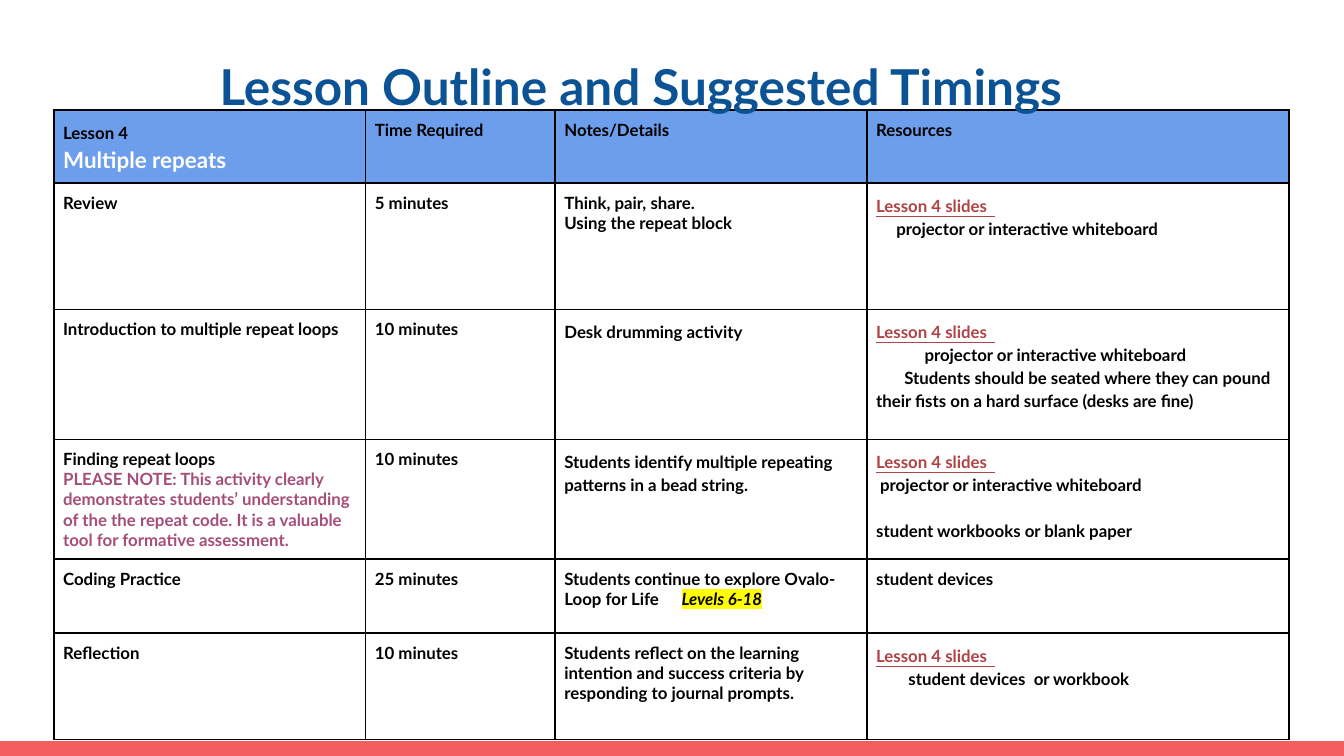
from dataclasses import dataclass

from lxml.etree import SubElement
from pptx import Presentation
from pptx.dml.color import RGBColor
from pptx.enum.shapes import MSO_SHAPE
from pptx.enum.text import PP_ALIGN
from pptx.oxml.ns import qn
from pptx.util import Inches, Pt


@dataclass(frozen=True)
class Theme:
    font: str = "Lato"
    title: str = "0B5394"
    text: str = "000000"
    header: str = "6D9EEB"
    subtitle: str = "FFFFFF"
    link: str = "AF4345"
    note: str = "A64D79"
    bar: str = "F55E61"
    marker: str = "FFFF00"
    title_size: float = 26.5
    subtitle_size: float = 12
    body_size: float = 9
    airy: float = 1.15


THEME = Theme()


@dataclass(frozen=True)
class Line:
    """One paragraph; indent is in inches, before and gap are in points."""
    text: str
    color: str = THEME.text
    size: float = THEME.body_size
    spacing: float = 1.0
    indent: float = 0
    before: float = 0
    underline: bool = False
    gap: float = 0
    marked: str = ""


def airy(text, **options):
    return Line(text, spacing=THEME.airy, **options)


LINK = airy("Lesson 4 slides  ", color=THEME.link, underline=True)
SCREEN = "projector or interactive whiteboard"
COLUMNS = [2.32, 1.41, 2.32, 3.14]
ROWS = [0.53, 0.94, 0.97, 0.63, 0.55, 0.79]
LESSONS = [
    [[airy("Lesson 4"),
      airy("Multiple repeats", color=THEME.subtitle, size=THEME.subtitle_size)],
     [Line("Time Required")],
     [Line("Notes/Details")],
     [Line("Resources")]],
    [[Line("Review")],
     [Line("5 minutes")],
     [Line("Think, pair, share."), Line("Using the repeat block")],
     [LINK, airy(SCREEN, indent=0.15)]],
    [[Line("Introduction to multiple repeat loops")],
     [Line("10 minutes")],
     [airy("Desk drumming activity")],
     [LINK, airy(SCREEN, indent=0.36),
      airy("Students should be seated where they can pound their fists "
           "on a hard surface (desks are fine)", indent=0.21)]],
    [[Line("Finding repeat loops"),
      Line("PLEASE NOTE: This activity clearly demonstrates students’ understanding "
           "of the the repeat code. It is a valuable tool for formative assessment.",
           color=THEME.note)],
     [Line("10 minutes")],
     [airy("Students identify multiple repeating patterns in a bead string.")],
     [LINK, airy(SCREEN, indent=0.03),
      airy("student workbooks or blank paper", before=12)]],
    [[Line("Coding Practice")],
     [Line("25 minutes")],
     [Line("Students continue to explore Ovalo- Loop for Life",
           gap=10, marked="Levels 6-18")],
     [Line("student devices")]],
    [[Line("Reflection")],
     [Line("10 minutes")],
     [Line("Students reflect on the learning intention and success criteria "
           "by responding to journal prompts.")],
     [LINK, airy("student devices  or workbook", indent=0.24)]],
]


def paint(fill, color):
    fill.solid()
    fill.fore_color.rgb = RGBColor.from_string(color)


def add_span(para, text):
    span = para.add_run()
    span.text = text
    return span


def add_marked_span(para, text, gap):
    """Adds highlighted italic text after one space widened by the gap."""
    space = add_span(para, " ")
    space._r.get_or_add_rPr().set("spc", str(round(gap * 100)))
    span = add_span(para, text)
    span.font.italic = True
    marker = SubElement(span._r.get_or_add_rPr(), qn("a:highlight"))
    SubElement(marker, qn("a:srgbClr"), val=THEME.marker)


def write_line(para, line):
    font = para.font
    font.name, font.size, font.bold = THEME.font, Pt(line.size), True
    font.underline = line.underline
    font.color.rgb = RGBColor.from_string(line.color)
    para.line_spacing = line.spacing
    para.space_before = Pt(line.before)
    properties = para._p.get_or_add_pPr()
    properties.set("marL", "0")
    properties.set("indent", str(Inches(line.indent)))
    add_span(para, line.text)
    if line.marked:
        add_marked_span(para, line.marked, line.gap)


def write_lines(frame, lines):
    for index, line in enumerate(lines):
        para = frame.add_paragraph() if index else frame.paragraphs[0]
        write_line(para, line)


def outline_cell(cell):
    properties = cell._tc.get_or_add_tcPr()
    for index, side in enumerate(("lnL", "lnR", "lnT", "lnB")):
        border = properties.makeelement(qn(f"a:{side}"), w=str(Pt(1)))
        fill = SubElement(border, qn("a:solidFill"))
        SubElement(fill, qn("a:srgbClr"), val=THEME.text)
        properties.insert(index, border)


def add_footer_bar(page, box):
    bar = page.shapes.add_shape(MSO_SHAPE.RECTANGLE, *box)
    bar.shadow.inherit = False
    paint(bar.fill, THEME.bar)
    bar.line.fill.background()


def add_lesson_table(page, left, top):
    table = page.shapes.add_table(
        len(ROWS), len(COLUMNS), left, top,
        Inches(sum(COLUMNS)), Inches(sum(ROWS))).table
    table.first_row = table.horz_banding = False
    for column, width in zip(table.columns, COLUMNS):
        column.width = Inches(width)
    for row, height in zip(table.rows, ROWS):
        row.height = Inches(height)
    for row_index, lesson in enumerate(LESSONS):
        for column_index, lines in enumerate(lesson):
            cell = table.cell(row_index, column_index)
            cell.margin_left = cell.margin_right = Inches(0.07)
            cell.margin_top = cell.margin_bottom = Inches(0.07)
            if row_index:
                cell.fill.background()
            else:
                paint(cell.fill, THEME.header)
            outline_cell(cell)
            write_lines(cell.text_frame, lines)


def add_title(page, box):
    frame = page.shapes.add_textbox(*box).text_frame
    frame.word_wrap = True
    frame.margin_left = frame.margin_right = Inches(0.1)
    frame.margin_top = frame.margin_bottom = Inches(0.1)
    write_lines(frame, [airy("Lesson Outline and Suggested Timings",
                             color=THEME.title, size=THEME.title_size)])
    frame.paragraphs[0].alignment = PP_ALIGN.CENTER


def main():
    deck = Presentation()
    deck.slide_width = Inches(10)
    deck.slide_height = deck.slide_width * 9 // 16
    page = deck.slides.add_slide(deck.slide_layouts[6])
    bar_height = Inches(0.11)
    add_footer_bar(page, (0, deck.slide_height - bar_height,
                          deck.slide_width, bar_height))
    add_lesson_table(page, Inches(0.4), Inches(0.82))
    add_title(page, [Inches(value) for value in (0.49, 0.25, 8.56, 0.95)])
    deck.save("out.pptx")


if __name__ == "__main__":
    main()
